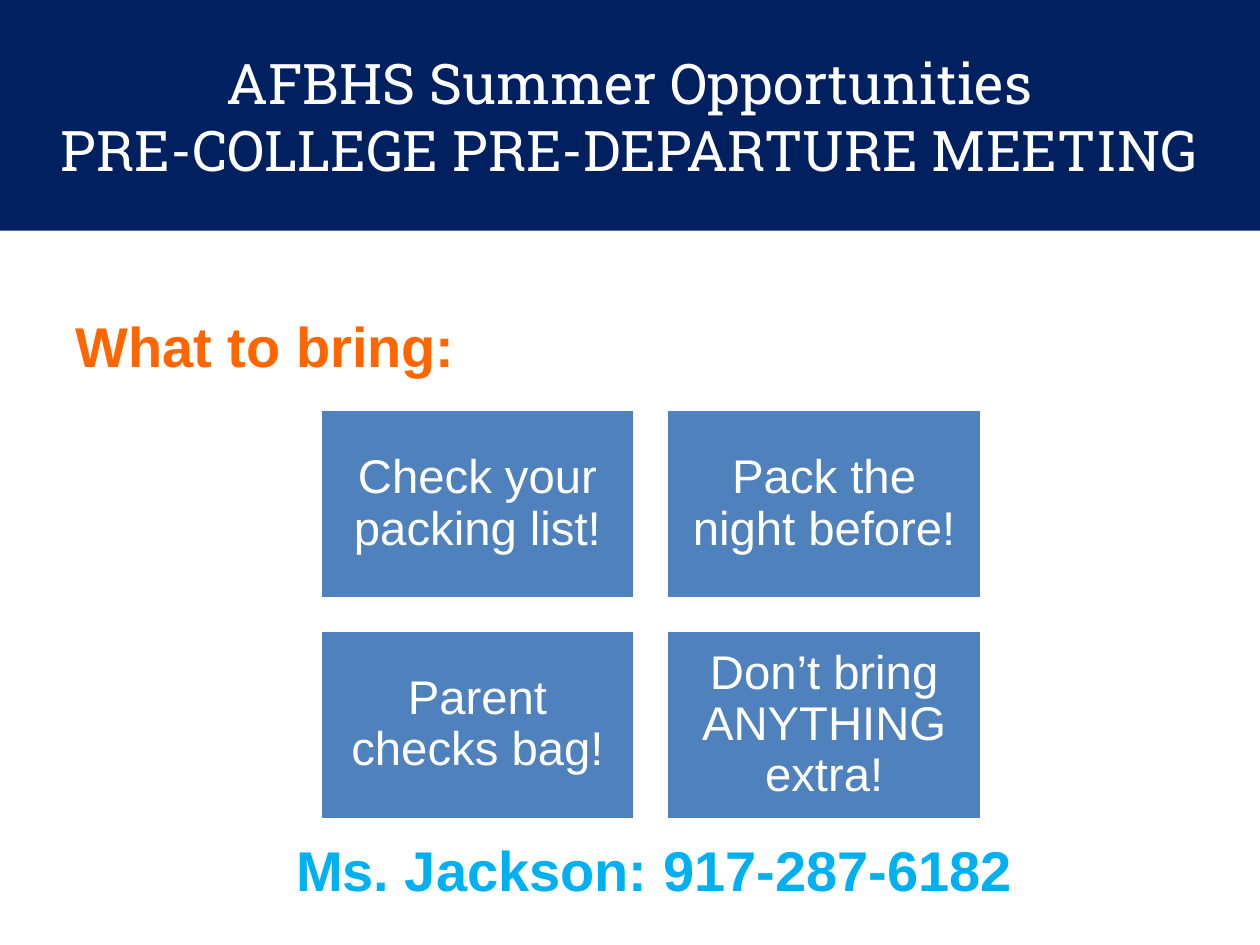
"""Build the pre-departure meeting slide with its packing reminders."""
from pptx import Presentation, util as u
from pptx.dml.color import RGBColor
from pptx.enum import shapes, text

TITLE = "AFBHS Summer Opportunities\vPRE-COLLEGE PRE-DEPARTURE MEETING"
LINES = [
    ("What to bring:", 1.27, 6.15, "FF6600"),
    ("Ms. Jackson: 917-287-6182", 5.72, 16.71, "00B0F0"),
]
REMINDERS = [
    "Check your packing list!",
    "Pack the night before!",
    "Parent checks bag!",
    "Don’t bring ANYTHING extra!",
]
COLUMNS = 2
GRID_LEFT, GRID_TOP = 6.45, 8.26
CARD_WIDTH, CARD_HEIGHT, GAP = 6.35, 3.81, 0.64


def color(value):
    return RGBColor.from_string(value)


def write(shape, content, size, font, hex_color, bold=False):
    frame = shape.text_frame
    frame.word_wrap = True
    paragraph = frame.paragraphs[0]
    paragraph.text = content
    for run in paragraph.runs:
        run.font.size = u.Pt(size)
        run.font.name = font
        run.font.bold = bold
        run.font.color.rgb = color(hex_color)
    return paragraph


def add_box(slide, left, top, width, height, fill):
    shape = slide.shapes.add_shape(
        shapes.MSO_SHAPE.RECTANGLE, u.Cm(left), u.Cm(top), u.Cm(width), u.Cm(height))
    shape.shadow.inherit = False
    shape.fill.solid()
    shape.fill.fore_color.rgb = color(fill)
    shape.line.fill.background()
    shape.text_frame.vertical_anchor = text.MSO_ANCHOR.MIDDLE
    return shape


def add_card(slide, index, content):
    row, column = divmod(index, COLUMNS)
    card = add_box(slide, GRID_LEFT + column * (CARD_WIDTH + GAP),
                   GRID_TOP + row * (CARD_HEIGHT + GAP),
                   CARD_WIDTH, CARD_HEIGHT, "4F81BD")
    card.line.color.rgb = color("FFFFFF")
    card.line.width = u.Pt(2)
    frame = card.text_frame
    frame.margin_left = frame.margin_right = u.Cm(0.28)
    frame.margin_top = frame.margin_bottom = u.Cm(0.28)
    paragraph = write(card, content, 27, "Arial", "FFFFFF")
    paragraph.alignment = text.PP_ALIGN.CENTER
    paragraph.line_spacing = 0.9


def add_line(slide, content, left, top, hex_color):
    box = slide.shapes.add_textbox(u.Cm(left), u.Cm(top), u.Cm(21.16), u.Cm(1.9))
    paragraph = write(box, content, 32, "Arial", hex_color, bold=True)
    paragraph.space_before = u.Pt(3)


def main():
    presentation = Presentation()
    presentation.slide_width = u.Cm(25.4)
    presentation.slide_height = u.Cm(19.05)
    slide = presentation.slides.add_slide(presentation.slide_layouts[6])

    banner = add_box(slide, 0, 0, 25.4, 4.65, "002060")
    heading = write(banner, TITLE, 32, "Roboto Slab", "FFFFFF")
    heading.alignment = text.PP_ALIGN.CENTER
    for index, content in enumerate(REMINDERS):
        add_card(slide, index, content)
    for line in LINES:
        add_line(slide, *line)

    presentation.save("out.pptx")


if __name__ == "__main__":
    main()
